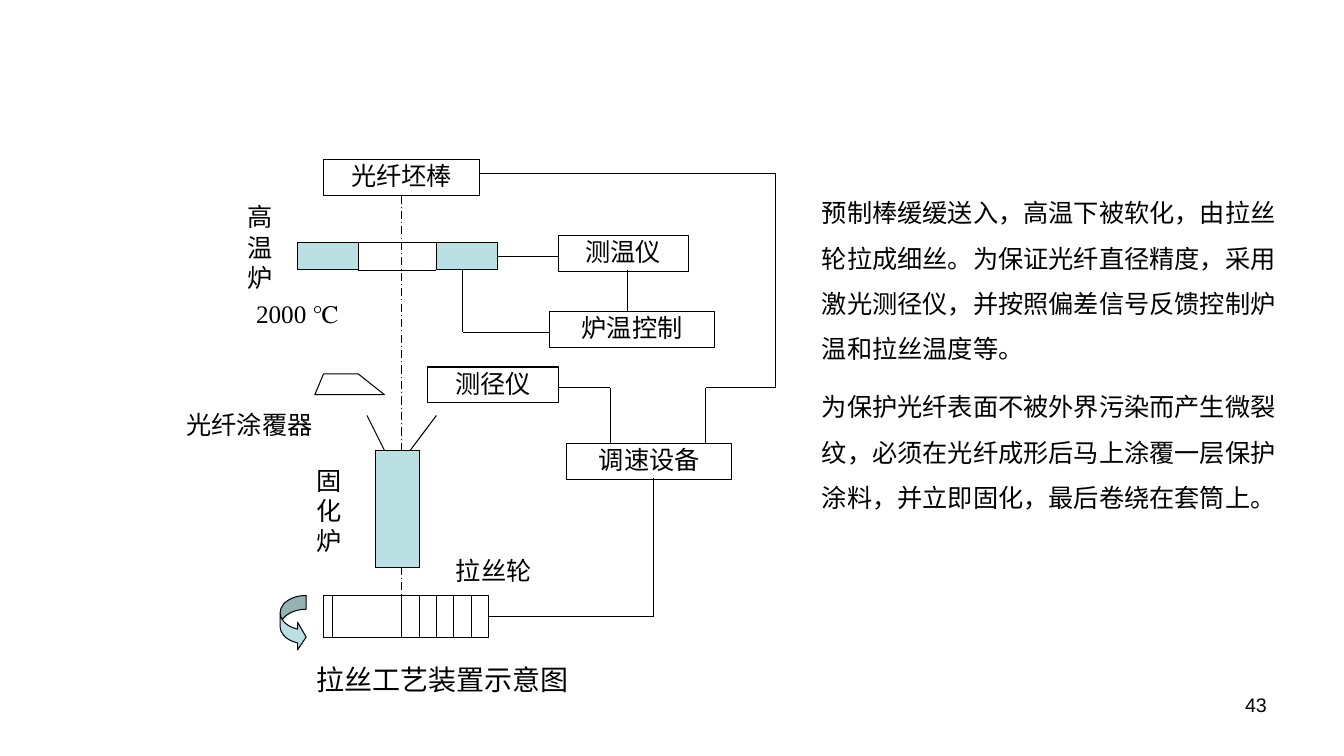
"""Build a slide showing the fibre drawing process and its equipment."""
from lxml import etree
from pptx import Presentation
from pptx.dml.color import RGBColor
from pptx.enum.dml import MSO_LINE
from pptx.enum.shapes import MSO_CONNECTOR, MSO_SHAPE
from pptx.enum.text import MSO_ANCHOR, MSO_AUTO_SIZE, PP_ALIGN
from pptx.oxml.ns import qn
from pptx.util import Inches, Pt

RECTANGLE = MSO_SHAPE.RECTANGLE
CURVED_ARROW = MSO_SHAPE.CURVED_RIGHT_ARROW
STRAIGHT = MSO_CONNECTOR.STRAIGHT
LONG_DASH_DOT = MSO_LINE.LONG_DASH_DOT
FIT_SHAPE = MSO_AUTO_SIZE.SHAPE_TO_FIT_TEXT
TOP = MSO_ANCHOR.TOP
LEFT, CENTER, RIGHT = PP_ALIGN.LEFT, PP_ALIGN.CENTER, PP_ALIGN.RIGHT

COLORS = {key: RGBColor.from_string(value) for key, value in
          {"ink": "000000", "furnace": "BBE0E3"}.items()}
SERIF, SANS, CJK = "Times New Roman", "Arial", "Noto Sans CJK SC"

deck = Presentation()
deck.slide_width, deck.slide_height = Inches(13.33), Inches(7.5)
page = deck.slides.add_slide(deck.slide_layouts[6])
shapes = page.shapes

GRID_LEFT, GRID_TOP = Inches(1.83), Inches(1.58)
COLUMN = Inches(5.86) / 68
ROW = Inches(4.74) / 69


def write(box, paragraphs, font=SERIF, size=18, align=LEFT, spacing=None, inset=(0.02, 0.01)):
    """Fill a box with paragraphs, one run in each."""
    frame = box.text_frame
    frame.word_wrap = True
    frame.auto_size = FIT_SHAPE
    frame.vertical_anchor = TOP
    frame.margin_left = frame.margin_right = Inches(inset[0])
    frame.margin_top = frame.margin_bottom = Inches(inset[1])
    for index, text in enumerate(paragraphs):
        para = frame.add_paragraph() if index else frame.paragraphs[0]
        para.alignment = align
        para.line_spacing = spacing
        para.space_before = Pt(9 if index else 0)
        span = para.add_run()
        span.text = text
        span.font.name, span.font.size = font, Pt(size)
        span.font.color.rgb = COLORS["ink"]


def draw(start, end, preset=None, fill=None):
    """Draw a preset shape, or else a line, between two grid points (column, row)."""
    x1, x2 = (round(GRID_LEFT + point[0] * COLUMN) for point in (start, end))
    y1, y2 = (round(GRID_TOP + point[1] * ROW) for point in (start, end))
    if preset is None:
        item = shapes.add_connector(STRAIGHT, x1, y1, x2, y2)
    else:
        item = shapes.add_shape(preset, x1, y1, x2 - x1, y2 - y1)
        item.shadow.inherit = False
        item.fill.background()
    if fill:
        item.fill.solid()
        item.fill.fore_color.rgb = COLORS[fill]
    item.line.color.rgb = COLORS["ink"]
    item.line.width = Pt(0.75)
    if preset is None:
        etree.SubElement(item._element.spPr, qn("a:effectLst"))
    return item


INSTRUMENTS = [
    ("光纤坯棒", 16, 0, 18),
    ("测温仪", 43, 11, 15),
    ("炉温控制", 42, 22, 19),
    ("测径仪", 28, 30, 15),
    ("调速设备", 44, 41, 19),
]
instruments = {}
for name, column, row, width in INSTRUMENTS:
    instruments[name] = draw((column, row), (column + width, row + 5.2), RECTANGLE)
    write(instruments[name], [name], align=CENTER)

for column in (13, 29):
    furnace_wall = draw((column, 12), (column + 7, 16), RECTANGLE, "furnace")

fibre = draw((25, 5), (25, 63))
fibre.begin_connect(instruments["光纤坯棒"], 2)
fibre.line.dash_style = LONG_DASH_DOT
draw((22, 42), (27, 59), RECTANGLE, "furnace")

wheel = draw((16, 63), (35, 69), RECTANGLE)
for column in (17, 25, 27, 29, 31, 33):
    draw((column, 63), (column, 69))

rotation = draw((11, 63), (14, 71), CURVED_ARROW, "furnace")
for index, value in enumerate((0.53, 1.07, 0.33)):
    rotation.adjustments[index] = value

draw((36, 14), (43, 14)).begin_connect(furnace_wall, 3)
draw((35, 66), (54, 66)).begin_connect(wheel, 3)

WIRES = [
    [(20, 12), (29, 12)],
    [(20, 16), (29, 16)],
    [(51, 16), (51, 22)],
    [(32, 16), (32, 25), (42, 25)],
    [(21, 37), (23, 42)],
    [(29, 37), (26, 42)],
    [(43, 33), (49, 33), (49, 41)],
    [(34, 2), (68, 2), (68, 33), (60, 33), (60, 41)],
    [(54, 46), (54, 66)],
]
for wire in WIRES:
    for start, end in zip(wire, wire[1:]):
        draw(start, end)

COATER = [(round(GRID_LEFT + column * COLUMN), round(GRID_TOP + row * ROW))
          for column, row in ((16, 31), (20, 31), (23, 34), (15, 34))]
outline = shapes.build_freeform(*COATER[0])
outline.add_line_segments(COATER[1:], close=True)
coater = outline.convert_to_shape()
coater.shadow.inherit = False
coater.fill.background()
coater.line.color.rgb = COLORS["ink"]
coater.line.width = Pt(0.75)

LABELS = [
    ("固化炉", 15, 44, 5, 14.7, {}),
    ("光纤涂覆器", 0, 36, 22, 5, {}),
    ("高温炉", 7, 6, 5, 14.7, {}),
    ("2000 ℃", 8, 20, 15, 5, {}),
    ("拉丝轮", 31, 57, 13, 5, {}),
    ("拉丝工艺装置示意图", 14, 72, 43, 6.4, {"font": CJK, "size": 20, "inset": (0.1, 0.05)}),
]
for text, column, row, width, height, style in LABELS:
    label = shapes.add_textbox(round(GRID_LEFT + column * COLUMN), round(GRID_TOP + row * ROW),
                               round(width * COLUMN), round(height * ROW))
    write(label, [text], **style)

BODY = [
    "预制棒缓缓送入，高温下被软化，由拉丝轮拉成细丝。为保证光纤直径精度，采用激光测径仪，"
    "并按照偏差信号反馈控制炉温和拉丝温度等。",
    "为保护光纤表面不被外界污染而产生微裂纹，必须在光纤成形后马上涂覆一层保护涂料，"
    "并立即固化，最后卷绕在套筒上。",
]
TEXTS = [
    ((0.61, 0.24, 0.35, 0.44), BODY, {"font": SANS, "spacing": 1.5}),
    ((0.72, 0.91, 0.23, 0.07), ["43"],
     {"font": SANS, "size": 14, "align": RIGHT, "inset": (0.1, 0.05)}),
]
for (left, top, width, height), paragraphs, style in TEXTS:
    box = shapes.add_textbox(round(left * deck.slide_width), round(top * deck.slide_height),
                             round(width * deck.slide_width), round(height * deck.slide_height))
    write(box, paragraphs, **style)

deck.save("out.pptx")
